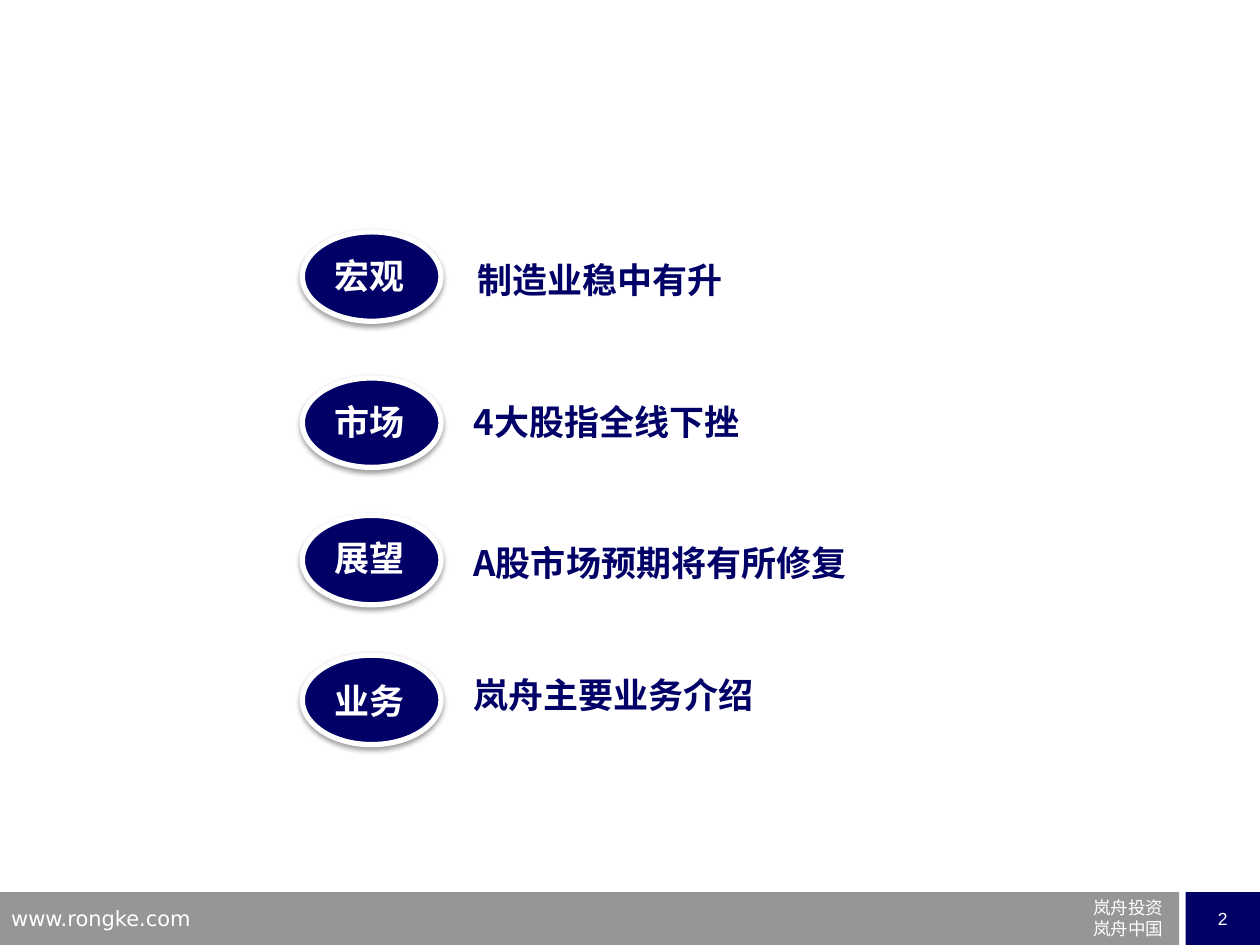
from dataclasses import dataclass

from lxml.etree import SubElement
from pptx import Presentation
from pptx.dml.color import RGBColor
from pptx.enum.shapes import MSO_SHAPE
from pptx.enum.text import MSO_ANCHOR, PP_ALIGN
from pptx.oxml.ns import qn
from pptx.util import Pt

NAVY = "000066"
WHITE = "FFFFFF"
GRAY = "969696"
HAN = "Noto Sans CJK SC"
SANS = "DejaVu Sans"


@dataclass
class Box:
    left: float
    top: float
    width: float
    height: float

    def points(self) -> list:
        return [Pt(n) for n in (self.left, self.top, self.width, self.height)]


@dataclass
class Style:
    font: str
    size: float
    color: str
    bold: bool = False
    align: PP_ALIGN = PP_ALIGN.LEFT


@dataclass
class Topic:
    label: str
    title: str
    top: float
    label_top: float
    title_left: float
    title_top: float


def rgb(code: str) -> RGBColor:
    return RGBColor.from_string(code)


def write(frame, lines: list[str], style: Style) -> None:
    for n, line in enumerate(lines):
        para = frame.add_paragraph() if n else frame.paragraphs[0]
        para.alignment = style.align
        run = para.add_run()
        run.text = line
        font = run.font
        font.name = style.font
        font.size = Pt(style.size)
        font.bold = style.bold
        font.color.rgb = rgb(style.color)
        SubElement(run._r.get_or_add_rPr(), qn("a:ea"), typeface=style.font)


def add_text(slide, box: Box, lines: list[str], style: Style) -> None:
    frame = slide.shapes.add_textbox(*box.points()).text_frame
    frame.word_wrap = True
    write(frame, lines, style)


def add_shape(slide, kind: MSO_SHAPE, box: Box, fill: str):
    shape = slide.shapes.add_shape(kind, *box.points())
    shape.shadow.inherit = False
    shape.fill.solid()
    shape.fill.fore_color.rgb = rgb(fill)
    shape.line.fill.background()
    return shape


def add_shade(shape) -> None:
    effects = shape._element.spPr.find(qn("a:effectLst"))
    shade = SubElement(
        effects, qn("a:outerShdw"), blurRad=str(Pt(3.1)), dist=str(Pt(1.6)),
        dir="5400000", rotWithShape="0",
    )
    color = SubElement(shade, qn("a:srgbClr"), val="000000")
    SubElement(color, qn("a:alpha"), val="38000")


def add_topic(slide, topic: Topic) -> None:
    oval = add_shape(slide, MSO_SHAPE.OVAL, Box(172.8, topic.top, 79.2, 51.1), NAVY)
    oval.line.color.rgb = rgb(WHITE)
    oval.line.width = Pt(3)
    add_shade(oval)
    add_text(slide, Box(184.3, topic.label_top, 57, 31.7), [topic.label],
             Style(HAN, 20, WHITE, True))
    add_text(slide, Box(topic.title_left, topic.title_top, 357, 31.7), [topic.title],
             Style(HAN, 20, NAVY, True))


def add_footer(slide) -> None:
    add_shape(slide, MSO_SHAPE.RECTANGLE, Box(0, 509.8, 673.9, 30.2), GRAY)
    add_text(slide, Box(-0.7, 514.1, 173.5, 18.7), ["www.rongke.com"],
             Style(SANS, 12, WHITE))
    add_text(slide, Box(591.1, 509, 80.6, 32.4), ["岚舟投资", "岚舟中国"],
             Style(SANS, 10, WHITE, align=PP_ALIGN.RIGHT))
    page = add_shape(slide, MSO_SHAPE.RECTANGLE, Box(677.5, 509.8, 42.5, 30.2), NAVY)
    frame = page.text_frame
    frame.word_wrap = False
    frame.vertical_anchor = MSO_ANCHOR.MIDDLE
    write(frame, ["2"], Style("Arial", 10, WHITE, align=PP_ALIGN.CENTER))


def main() -> None:
    deck = Presentation()
    deck.slide_width = Pt(720)
    deck.slide_height = Pt(540)
    slide = deck.slides.add_slide(deck.slide_layouts[6])
    add_footer(slide)
    topics = [
        Topic("宏观", "制造业稳中有升", 132.5, 141.8, 265.7, 144),
        Topic("市场", "4大股指全线下挫", 216, 225.4, 263.5, 225.4),
        Topic("展望", "A股市场预期将有所修复", 294.5, 303.1, 263.5, 306),
        Topic("业务", "岚舟主要业务介绍", 374.4, 384.5, 263.5, 381.6),
    ]
    for topic in topics:
        add_topic(slide, topic)
    deck.save("out.pptx")


if __name__ == "__main__":
    main()
